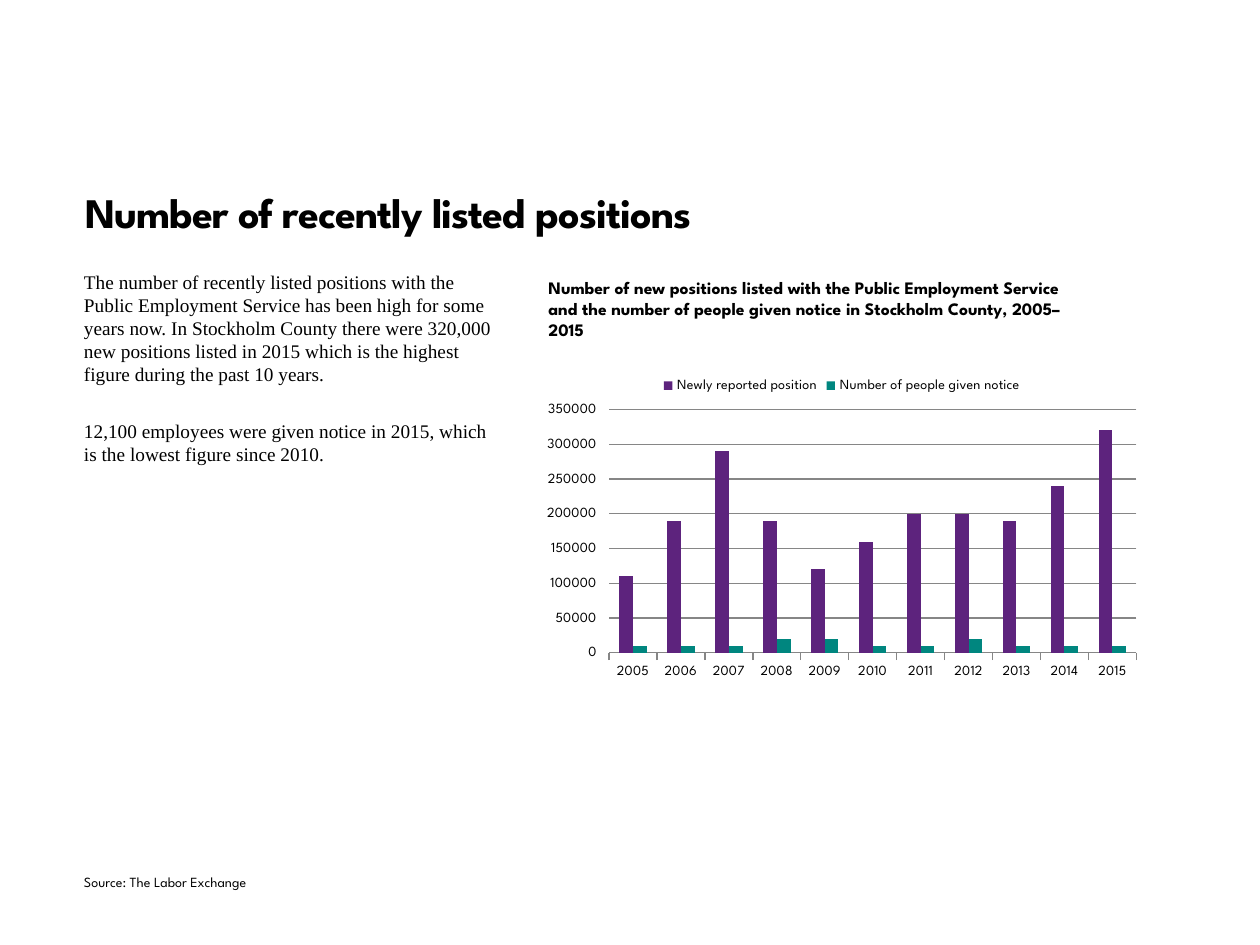
from lxml import etree
from pptx import Presentation
from pptx.chart.data import CategoryChartData
from pptx.dml.color import RGBColor
from pptx.enum.chart import XL_CHART_TYPE as ChartType
from pptx.enum.chart import XL_LEGEND_POSITION as LegendPos
from pptx.enum.chart import XL_TICK_MARK as Tick
from pptx.oxml.ns import qn
from pptx.util import Pt

COLORS = {"text": "000000", "grid": "868686", "listed": "5D237D", "notice": "00867F"}
SANS, SERIF = "League Spartan", "Times New Roman"
YEARS = [str(year) for year in range(2005, 2016)]
SERIES = [
    ("Newly reported position", "listed",
     [110000, 190000, 290000, 190000, 120000, 160000, 200000, 200000, 190000, 240000, 320000]),
    ("Number of people given notice", "notice",
     [10000, 10000, 10000, 20000, 20000, 10000, 10000, 20000, 10000, 10000, 10000]),
]
BODY = [
    "The number of recently listed positions with the Public Employment Service has been high "
    "for some years now. In Stockholm County there were 320,000 new positions listed in 2015 "
    "which is the highest figure during the past 10 years.",
    "12,100 employees were given notice in 2015, which is the lowest figure since 2010.",
]
CHART_TITLE = ("Number of new positions listed with the Public Employment Service and the number "
               "of people given notice in Stockholm County, 2005–2015")


def rgb(name):
    """Return the named colour."""
    return RGBColor.from_string(COLORS[name])


def style_font(font, size, face=SANS, bold=False):
    """Set size, face, weight and text colour of a font."""
    font.size, font.name, font.bold = Pt(size), face, bold
    font.color.rgb = rgb("text")


def add_text(slide, box, texts, size, face=SANS, bold=False, after=0, leading=None, spacing=None):
    """Add a wrapped text box without margins, one paragraph per text."""
    tf = slide.shapes.add_textbox(*map(Pt, box)).text_frame
    tf.word_wrap = True
    tf.margin_left = tf.margin_top = tf.margin_right = tf.margin_bottom = 0
    for i, text in enumerate(texts):
        p = tf.add_paragraph() if i else tf.paragraphs[0]
        p.space_after = Pt(after)
        if leading:
            p.line_spacing = Pt(leading)
        r = p.add_run()
        r.text = text
        style_font(r.font, size, face, bold)
        if spacing:
            r.font._element.set("spc", str(int(spacing * 100)))


def set_plot_layout(chart, **fractions):
    """Fix the inner plot area as fractions of the chart frame."""
    plot_area = chart._chartSpace.find(".//" + qn("c:plotArea"))
    for old in plot_area.findall(qn("c:layout")):
        plot_area.remove(old)
    layout = etree.Element(qn("c:layout"))
    manual = etree.SubElement(layout, qn("c:manualLayout"))
    settings = {"layoutTarget": "inner", "xMode": "edge", "yMode": "edge", **fractions}
    for tag, value in settings.items():
        etree.SubElement(manual, qn("c:" + tag)).set("val", str(value))
    plot_area.insert(0, layout)


def style_axes(chart):
    """Style both axes and the horizontal gridlines."""
    cat, val = chart.category_axis, chart.value_axis
    for axis in (cat, val):
        axis.major_tick_mark, axis.minor_tick_mark = Tick.OUTSIDE, Tick.NONE
        style_font(axis.tick_labels.font, 8)
    val.minimum_scale, val.maximum_scale, val.major_unit = 0, 350000, 50000
    val.has_major_gridlines = True
    val.tick_labels.number_format = "0"
    val.tick_labels.number_format_is_linked = False
    val.format.line.fill.background()
    for line in (cat.format.line, val.major_gridlines.format.line):
        line.color.rgb = rgb("grid")
        line.width = Pt(0.75)


def add_column_chart(slide, box):
    """Add the clustered column chart with its legend on top."""
    data = CategoryChartData(number_format="0")
    data.categories = YEARS
    for name, _, values in SERIES:
        data.add_series(name, values)
    chart = slide.shapes.add_chart(ChartType.COLUMN_CLUSTERED, *map(Pt, box), data).chart
    style_font(chart.font, 8, "Arial")
    chart.has_title = False
    chart.has_legend = True
    chart.legend.position = LegendPos.TOP
    chart.legend.include_in_layout = False
    style_font(chart.legend.font, 8)
    plot = chart.plots[0]
    plot.gap_width, plot.overlap, plot.vary_by_categories = 150, 0, False
    for series, (_, color, _) in zip(plot.series, SERIES):
        series.format.fill.solid()
        series.format.fill.fore_color.rgb = rgb(color)
    style_axes(chart)
    set_plot_layout(chart, x=0.12, y=0.14, w=0.86, h=0.76)


def main():
    """Build the slide and save it."""
    prs = Presentation()
    prs.slide_width, prs.slide_height = Pt(720), Pt(540)
    slide = prs.slides.add_slide(prs.slide_layouts[6])
    add_text(slide, (48, 154.4, 234, 175), BODY, 11, SERIF, after=19)
    add_text(slide, (48.7, 107.3, 432, 63.4), ["Number of recently listed positions"], 24,
             bold=True, leading=28, spacing=-0.5)
    add_text(slide, (48, 499, 574.6, 14.4), ["Source: The Labor Exchange"], 8)
    add_text(slide, (313.4, 158.3, 308.9, 36.7), [CHART_TITLE], 10, bold=True)
    add_column_chart(slide, (306, 208.5, 350.4, 182.9))
    prs.save("out.pptx")


if __name__ == "__main__":
    main()
